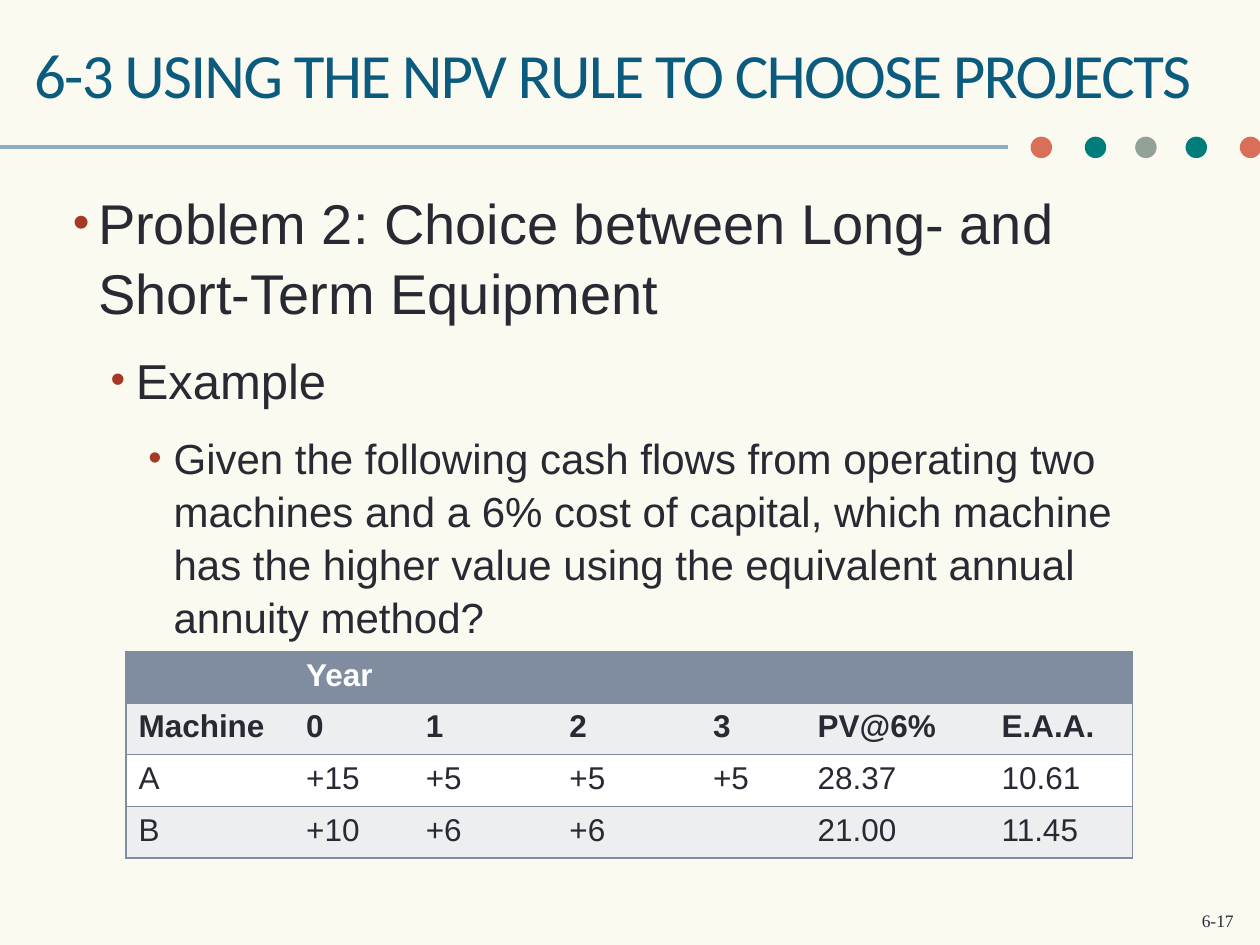
from dataclasses import dataclass

from lxml.etree import SubElement
from pptx import Presentation
from pptx.dml.color import RGBColor
from pptx.enum.shapes import MSO_CONNECTOR as Connector, MSO_SHAPE as Preset
from pptx.enum.text import MSO_ANCHOR as Anchor, PP_ALIGN as Align
from pptx.oxml.ns import qn
from pptx.util import Inches, Pt


@dataclass(frozen=True)
class Theme:
    paper: str = "FAFAF1"
    ink: str = "292934"
    title: str = "0B5B7F"
    rule: str = "8EACC4"
    coral: str = "D96E59"
    teal: str = "007D7A"
    sage: str = "93A299"
    bullet: str = "A53926"
    slate: str = "808DA0"
    band: str = "EDEEF0"
    white: str = "FFFFFF"
    body_font: str = "Arial"
    title_font: str = "Calibri"
    number_font: str = "Times New Roman"
    title_size: int = 36
    level_sizes: tuple = (32, 28, 24)
    table_size: int = 18
    number_size: int = 10


THEME = Theme()
WIDTH, HEIGHT = 10, 7.5
TITLE = "6-3 USING THE NPV RULE TO CHOOSE PROJECTS"
PAGE_NUMBER = "6-17"
OUTLINE = [
    "Problem 2: Choice between Long- and Short-Term Equipment",
    "Example",
    "Given the following cash flows from operating two machines and a 6% cost "
    "of capital, which machine has the higher value using the equivalent "
    "annual annuity method?",
]
BULLET_SIZES = (85, 85, 90)
CASH_FLOWS = [
    ("", "Year", "", "", "", "", ""),
    ("Machine", "0", "1", "2", "3", "PV@6%", "E.A.A."),
    ("A", "+15", "+5", "+5", "+5", "28.37", "10.61"),
    ("B", "+10", "+6", "+6", "", "21.00", "11.45"),
]
COLUMN_WIDTHS = (1.33, 0.95, 1.14, 1.14, 0.83, 1.46, 1.14)
ROW_HEIGHT = 0.41
ROW_FILLS = (THEME.slate, THEME.band, THEME.white, THEME.band)
RULE_Y, DOT_SIZE = 1.17, 0.17
DOTS = [
    (8.18, THEME.coral),
    (8.61, THEME.teal),
    (9.01, THEME.sage),
    (9.41, THEME.teal),
    (9.84, THEME.coral),
]
NO_GRID_STYLE = "{2D5ABB26-0587-4C30-8999-92F81FD0307C}"


def rgb(color):
    """Turn a hex string into a colour."""
    return RGBColor.from_string(color)


def apply(target, **values):
    """Set each named attribute on the target."""
    for name, value in values.items():
        setattr(target, name, value)


def write(para, text, size, color=THEME.ink, font=THEME.body_font, bold=False):
    """Add one formatted span to a paragraph."""
    span = para.add_run()
    span.text = text
    apply(span.font, size=Pt(size), name=font, bold=bold)
    span.font.color.rgb = rgb(color)
    return span


def place(shape, left, top, width, height):
    """Move and size a shape in inches."""
    apply(shape, left=Inches(left), top=Inches(top),
          width=Inches(width), height=Inches(height))


def add_text_frame(page, box, anchor):
    """Add a wrapping text box and return its frame."""
    frame = page.shapes.add_textbox(*map(Inches, box)).text_frame
    apply(frame, word_wrap=True, vertical_anchor=anchor)
    return frame


def add_title(page):
    """Format and fill the title placeholder."""
    title = page.shapes.title
    place(title, 0.17, 0, 9.67, 1.16)
    apply(title.text_frame, word_wrap=True, vertical_anchor=Anchor.MIDDLE)
    para = title.text_frame.paragraphs[0]
    para.alignment = Align.LEFT
    span = write(para, TITLE, THEME.title_size, THEME.title, THEME.title_font)
    span.font._element.set("spc", "-100")


def add_rule(page):
    """Draw the line and the row of dots under the title."""
    line = page.shapes.add_connector(
        Connector.STRAIGHT, 0, Inches(RULE_Y), Inches(0.8 * WIDTH), Inches(RULE_Y))
    line.line.width = Pt(2.25)
    line.line.color.rgb = rgb(THEME.rule)
    SubElement(line._element.spPr, qn("a:effectLst"))
    for left, color in DOTS:
        box = (left, RULE_Y - DOT_SIZE / 2, DOT_SIZE, DOT_SIZE)
        dot = page.shapes.add_shape(Preset.OVAL, *map(Inches, box))
        dot.shadow.inherit = False
        dot.fill.solid()
        dot.fill.fore_color.rgb = rgb(color)
        dot.line.fill.background()


def add_bullet(para, level):
    """Give a paragraph its hanging indent and coloured bullet."""
    props = para._p.get_or_add_pPr()
    props.set("marL", str(Inches(0.2 + 0.3 * level)))
    props.set("indent", str(Inches(-0.2)))
    color = SubElement(props, qn("a:buClr"))
    SubElement(color, qn("a:srgbClr"), val=THEME.bullet)
    SubElement(props, qn("a:buSzPct"), val=str(BULLET_SIZES[level] * 1000))
    SubElement(props, qn("a:buFont"), typeface=THEME.body_font)
    SubElement(props, qn("a:buChar"), char="•")


def add_outline(page):
    """Write the three-level outline."""
    frame = add_text_frame(page, (0.48, 1.42, 9, 5.33), Anchor.TOP)
    for level, text in enumerate(OUTLINE):
        para = frame.add_paragraph() if level else frame.paragraphs[0]
        apply(para, level=level, line_spacing=1.05,
              space_before=Pt(6), space_after=Pt(6))
        add_bullet(para, level)
        write(para, text, THEME.level_sizes[level])


def add_borders(cell, sides):
    """Draw thin slate borders on the given sides of a cell."""
    props = cell._tc.get_or_add_tcPr()
    for side in sides:
        edge = SubElement(props, qn(f"a:ln{side}"), w=str(Pt(1)))
        fill = SubElement(edge, qn("a:solidFill"))
        SubElement(fill, qn("a:srgbClr"), val=THEME.slate)


def add_cash_flows(page):
    """Build the cash flow table."""
    box = (1, 5.17, sum(COLUMN_WIDTHS), ROW_HEIGHT * len(CASH_FLOWS))
    frame = page.shapes.add_table(
        len(CASH_FLOWS), len(COLUMN_WIDTHS), *map(Inches, box))
    table = frame.table
    table._tbl.tblPr.find(qn("a:tableStyleId")).text = NO_GRID_STYLE
    for column, width in zip(table.columns, COLUMN_WIDTHS):
        column.width = Inches(width)
    last = len(COLUMN_WIDTHS) - 1
    for r, (values, fill) in enumerate(zip(CASH_FLOWS, ROW_FILLS)):
        table.rows[r].height = Inches(ROW_HEIGHT)
        for c, text in enumerate(values):
            cell = table.cell(r, c)
            add_borders(cell, {0: "LTB", last: "RTB"}.get(c, "TB"))
            cell.fill.solid()
            cell.fill.fore_color.rgb = rgb(fill)
            para = cell.text_frame.paragraphs[0]
            para.font.size = Pt(THEME.table_size)
            if text:
                write(para, text, THEME.table_size,
                      THEME.ink if r else THEME.white, bold=r < 2)


def add_page_number(page):
    """Write the page number in the lower right corner."""
    frame = add_text_frame(page, (7.56, 6.94, 2.33, 0.5), Anchor.BOTTOM)
    para = frame.paragraphs[0]
    para.alignment = Align.RIGHT
    write(para, PAGE_NUMBER, THEME.number_size, font=THEME.number_font)


def main():
    """Build and save the deck."""
    deck = Presentation()
    apply(deck, slide_width=Inches(WIDTH), slide_height=Inches(HEIGHT))
    page = deck.slides.add_slide(deck.slide_layouts.get_by_name("Title Only"))
    page.background.fill.solid()
    page.background.fill.fore_color.rgb = rgb(THEME.paper)
    for add_part in (add_rule, add_page_number, add_title, add_outline, add_cash_flows):
        add_part(page)
    deck.save("out.pptx")


if __name__ == "__main__":
    main()
